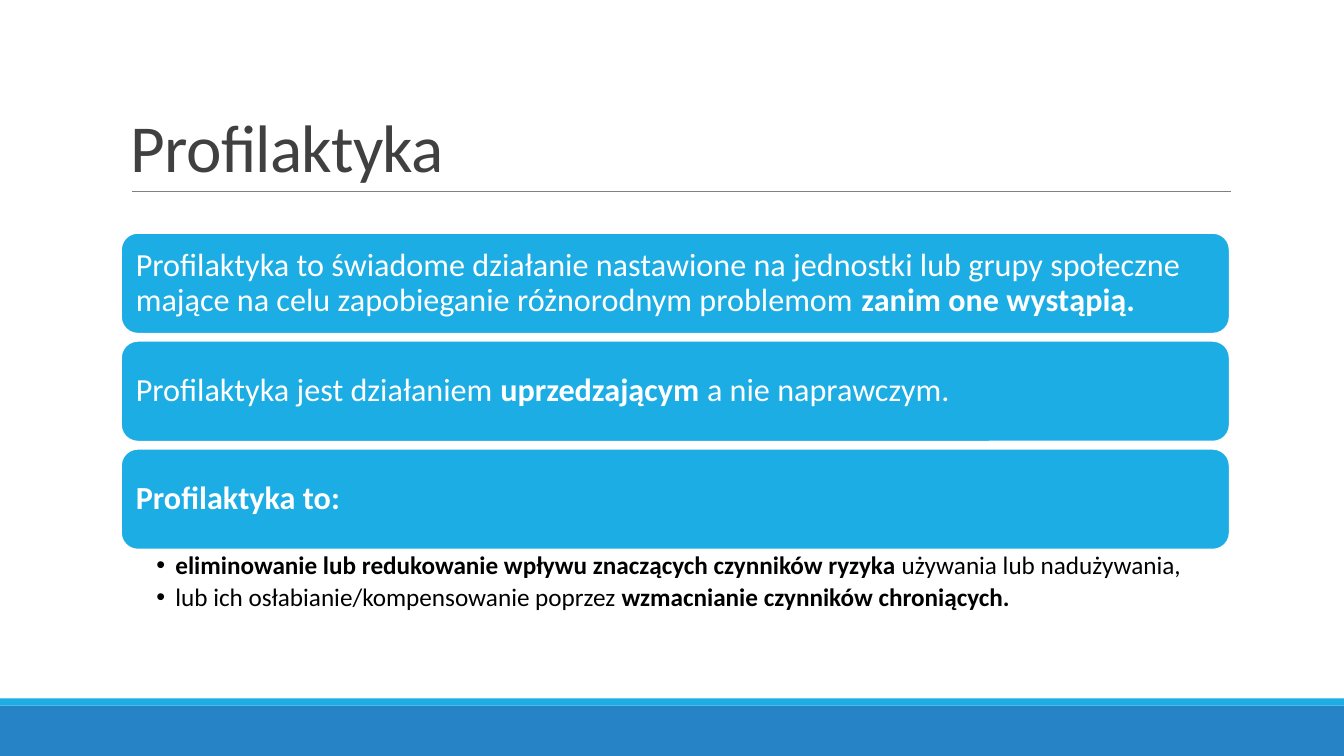
from lxml.etree import SubElement
from pptx import Presentation
from pptx.dml.color import RGBColor
from pptx.enum.shapes import MSO_CONNECTOR, MSO_SHAPE
from pptx.enum.text import MSO_ANCHOR, MSO_AUTO_SIZE, PP_ALIGN
from pptx.oxml.ns import qn
from pptx.util import Cm, Pt

SKY = RGBColor(0x1C, 0xAD, 0xE4)
BLUE = RGBColor(0x26, 0x83, 0xC6)
GREY = RGBColor(0x80, 0x80, 0x80)
CHARCOAL = RGBColor(0x40, 0x40, 0x40)
WHITE = RGBColor(0xFF, 0xFF, 0xFF)
BLACK = RGBColor(0, 0, 0)

LEFT, WIDTH = 3.05, 27.94
CARD_TOP, CARD_HEIGHT, CARD_STEP = 5.87, 2.54, 2.72

STATEMENTS = [
    [("Profilaktyka to świadome działanie nastawione na jednostki lub grupy "
      "społeczne mające na celu zapobieganie różnorodnym problemom ", False),
     ("zanim one wystąpią.", True)],
    [("Profilaktyka jest działaniem ", False), ("uprzedzającym", True),
     (" a nie naprawczym.", False)],
    [("Profilaktyka to:", True)],
]
GOALS = [
    [("eliminowanie lub redukowanie wpływu znaczących czynników ryzyka", True),
     (" używania lub nadużywania,", False)],
    [("lub ich osłabianie/kompensowanie poprzez ", False),
     ("wzmacnianie czynników chroniących.", True)],
]


class SlideBuilder:
    font = "Calibri"

    def __init__(self, slide):
        self.slide = slide

    def place(self, shape, left, top, width, height):
        shape.left, shape.top = Cm(left), Cm(top)
        shape.width, shape.height = Cm(width), Cm(height)

    def frame(self, shape, anchor, margins):
        frame = shape.text_frame
        frame.word_wrap = True
        frame.auto_size = MSO_AUTO_SIZE.NONE
        frame.vertical_anchor = anchor
        (frame.margin_left, frame.margin_top,
         frame.margin_right, frame.margin_bottom) = map(Cm, margins)
        return frame

    def fill_paragraph(self, paragraph, parts, size, color, spacing=0.9):
        for text, bold in parts:
            run = paragraph.add_run()
            run.text = text
            run.font.bold = bold
        paragraph.alignment = PP_ALIGN.LEFT
        paragraph.line_spacing = spacing
        paragraph.space_before = Pt(0)
        paragraph.font.name = self.font
        paragraph.font.size = Pt(size)
        paragraph.font.color.rgb = color

    def title(self, text, left, top, width, height):
        title = self.slide.shapes.title
        self.place(title, left, top, width, height)
        frame = self.frame(title, MSO_ANCHOR.BOTTOM, (0.25, 0.13, 0.25, 0.13))
        heading = frame.paragraphs[0]
        self.fill_paragraph(heading, [(text, False)], 48, CHARCOAL, 0.85)
        heading.runs[0].font._element.set("spc", "-50")

    def bullets(self, items, left, top, width, height):
        body = self.slide.placeholders[1]
        self.place(body, left, top, width, height)
        frame = self.frame(body, MSO_ANCHOR.TOP, (0.89, 0.08, 0.45, 0.08))
        for index, parts in enumerate(items):
            item = frame.add_paragraph() if index else frame.paragraphs[0]
            self.fill_paragraph(item, parts, 18, BLACK)
            item.space_after = Pt(3.6)
            properties = item._p.get_or_add_pPr()
            properties.set("marL", str(Cm(0.48)))
            properties.set("indent", str(-Cm(0.48)))
            bullet = SubElement(properties, qn("a:buChar"))
            bullet.set("char", "•")
            properties.find(qn("a:defRPr")).addprevious(bullet)

    def block(self, kind, color, left, top, width, height):
        block = self.slide.shapes.add_shape(
            kind, Cm(left), Cm(top), Cm(width), Cm(height))
        block.shadow.inherit = False
        block.fill.solid()
        block.fill.fore_color.rgb = color
        block.line.fill.background()
        return block

    def card(self, parts, left, top, width, height):
        card = self.block(MSO_SHAPE.ROUNDED_RECTANGLE, SKY, left, top, width, height)
        card.line.color.rgb = WHITE
        card.line.width = Pt(1.25)
        frame = self.frame(card, MSO_ANCHOR.MIDDLE, (0.25,) * 4)
        self.fill_paragraph(frame.paragraphs[0], parts, 23, WHITE)

    def rule(self, left, right, y):
        rule = self.slide.shapes.add_connector(
            MSO_CONNECTOR.STRAIGHT, Cm(left), Cm(y), Cm(right), Cm(y))
        rule.line.color.rgb = GREY
        rule.line.width = Pt(0.5)
        SubElement(rule._element.spPr, qn("a:effectLst"))


def main():
    deck = Presentation()
    deck.slide_width, deck.slide_height = Cm(33.87), Cm(19.05)
    builder = SlideBuilder(deck.slides.add_slide(deck.slide_layouts[1]))

    builder.block(MSO_SHAPE.RECTANGLE, BLUE, 0, 17.78, 33.87, 1.27)
    builder.block(MSO_SHAPE.RECTANGLE, SKY, 0, 17.6, 33.87, 0.18)
    builder.rule(3.33, 31.01, 4.83)
    builder.title("Profilaktyka", LEFT, 0.79, WIDTH, 4.04)
    for index, statement in enumerate(STATEMENTS):
        builder.card(statement, LEFT, CARD_TOP + index * CARD_STEP, WIDTH, CARD_HEIGHT)
    builder.bullets(GOALS, LEFT, 13.84, WIDTH, 1.73)

    deck.save("out.pptx")


if __name__ == "__main__":
    main()
